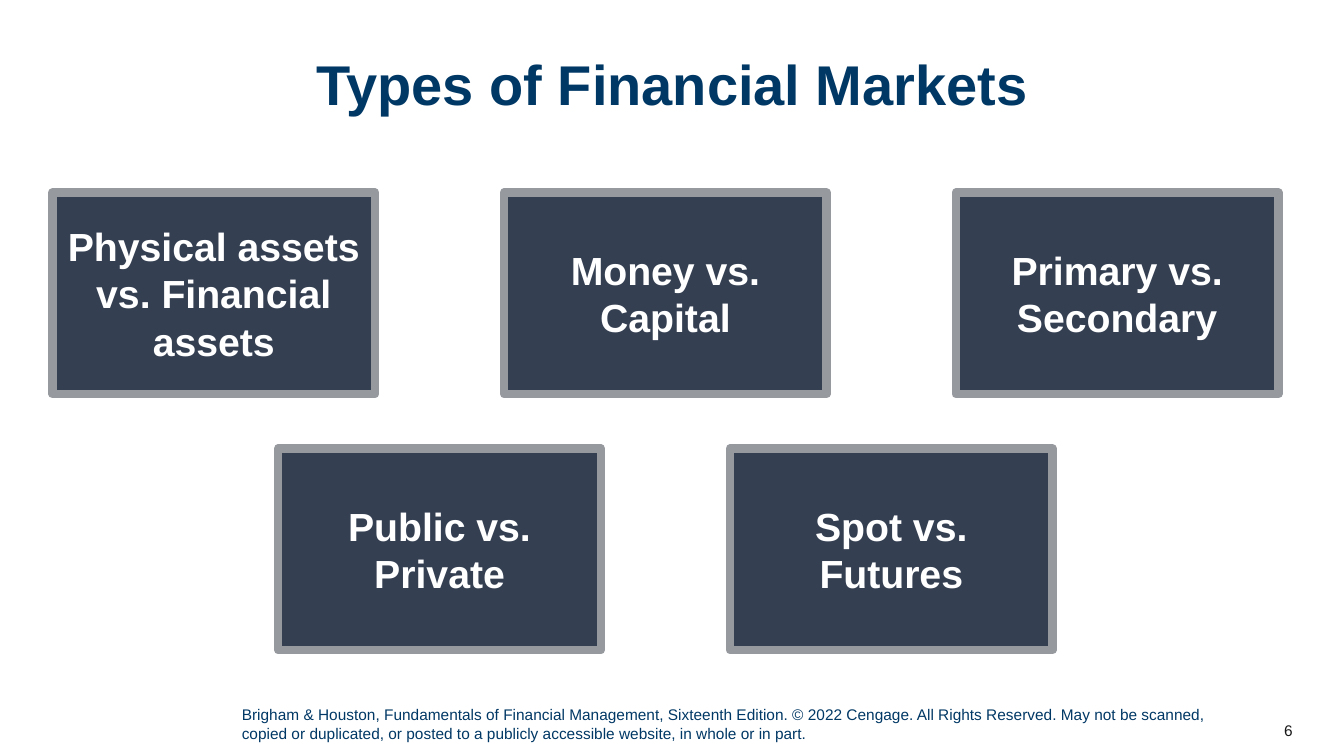
from pptx import Presentation
from pptx.dml.color import RGBColor
from pptx.enum.shapes import MSO_SHAPE
from pptx.enum.text import MSO_ANCHOR, PP_ALIGN
from pptx.util import Inches, Pt

NAVY, SLATE, GREY, WHITE, BLACK = "003865", "343F52", "96999E", "FFFFFF", "181717"
WIDE, HIGH = 3.2, 2
STEP = 4.48  # distance between left edges of neighbouring boxes

# Each row: left edge, top edge, labels
ROWS = [
    (0.52, 1.91, ["Physical assets vs. Financial assets", "Money vs. Capital",
                  "Primary vs. Secondary"]),
    (0.52 + STEP / 2, 4.45, ["Public vs. Private", "Spot vs. Futures"]),
]
FOOTER = ("Brigham & Houston, Fundamentals of Financial Management, Sixteenth Edition. "
          "© 2022 Cengage. All Rights Reserved. May not be scanned, copied or duplicated, "
          "or posted to a publicly accessible website, in whole or in part.")


def color(code):
    return RGBColor.from_string(code)


def write(shape, text, size, code, bold=False, align=PP_ALIGN.LEFT,
          anchor=MSO_ANCHOR.TOP, spacing=1.0):
    frame = shape.text_frame
    frame.text = text
    frame.word_wrap = True
    frame.vertical_anchor = anchor
    para = frame.paragraphs[0]
    para.alignment = align
    para.line_spacing = spacing
    font = para.runs[0].font
    for name, value in {"name": "Arial", "size": Pt(size), "bold": bold}.items():
        setattr(font, name, value)
    font.color.rgb = color(code)


def add_title(slide, text):
    title = slide.shapes.title
    place = {"left": 0.52, "top": 0.52, "width": 12.29, "height": 1.33}
    for name, value in place.items():
        setattr(title, name, Inches(value))
    write(title, text, 40, NAVY, bold=True, align=PP_ALIGN.CENTER, spacing=0.9)


def add_box(slide, left, top, text):
    box = slide.shapes.add_shape(MSO_SHAPE.RECTANGLE, Inches(left), Inches(top),
                                 Inches(WIDE), Inches(HIGH))
    box.shadow.inherit = False
    box.fill.solid()
    box.fill.fore_color.rgb = color(SLATE)
    box.line.color.rgb = color(GREY)
    box.line.width = Pt(6)
    write(box, text, 28, WHITE, bold=True, align=PP_ALIGN.CENTER,
          anchor=MSO_ANCHOR.MIDDLE)


def add_note(slide, place, text, code, **style):
    note = slide.shapes.add_textbox(*map(Inches, place))
    write(note, text, 11, code, **style)


def main():
    deck = Presentation()
    deck.slide_width, deck.slide_height = Inches(13.33), Inches(7.5)
    slide = deck.slides.add_slide(deck.slide_layouts[5])

    # Title
    add_title(slide, "Types of Financial Markets")

    # Market types
    for left, top, labels in ROWS:
        for col, label in enumerate(labels):
            add_box(slide, left + col * STEP, top, label)

    # Footer and slide number
    add_note(slide, (2.3, 6.95, 9.8, 0.47), FOOTER, NAVY)
    add_note(slide, (12.12, 7.05, 0.8, 0.4), "6", BLACK,
             align=PP_ALIGN.RIGHT, anchor=MSO_ANCHOR.MIDDLE)

    deck.save("out.pptx")


if __name__ == "__main__":
    main()
